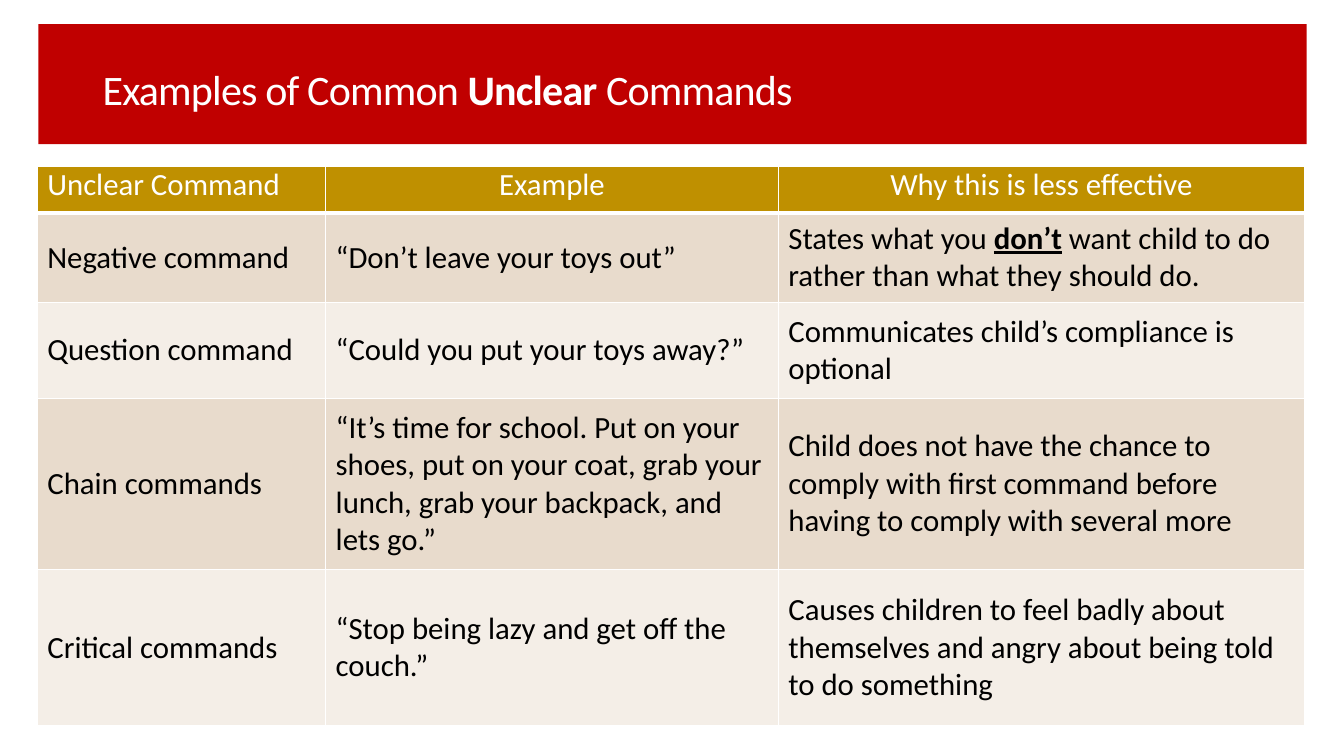
from lxml import etree
from pptx import Presentation
from pptx.dml.color import RGBColor
from pptx.enum.shapes import MSO_SHAPE
from pptx.enum.text import MSO_ANCHOR, PP_ALIGN
from pptx.oxml.ns import qn
from pptx.util import Inches, Pt

RECTANGLE = MSO_SHAPE.RECTANGLE
TOP, MIDDLE = MSO_ANCHOR.TOP, MSO_ANCHOR.MIDDLE
LEFT, CENTER = PP_ALIGN.LEFT, PP_ALIGN.CENTER

THEME = {
    "font": "Calibri",
    "title_size": 30,
    "table_size": 22,
    "banner": "C00000",
    "header": "BF9000",
    "bands": ("E8DBCC", "F4EEE7"),
    "light": "FFFFFF",
    "dark": "000000",
}

COLUMN_WIDTHS = (2.86, 4.49, 5.22)
ROW_HEIGHTS = (0.46, 0.89, 0.95, 1.7, 1.55)

# Each cell is a list of text pieces; every second piece is emphasised
TABLE_ROWS = (
    (["Unclear Command"], ["Example"], ["Why this is less effective"]),
    (["Negative command"], ["“Don’t leave your toys out”"],
     ["States what you ", "don’t", " want child to do rather than what they should do."]),
    (["Question command"], ["“Could you put your toys away?”"],
     ["Communicates child’s compliance is optional"]),
    (["Chain commands"],
     ["“It’s time for school. Put on your shoes, put on your coat, grab your lunch, "
      "grab your backpack, and lets go.”"],
     ["Child does not have the chance to comply with first command before having to "
      "comply with several more"]),
    (["Critical commands"], ["“Stop being lazy and get off the couch.”"],
     ["Causes children to feel badly about themselves and angry about being told to do "
      "something"]),
)


def write_text(text_frame, pieces, size, color, align=LEFT, underline=False,
               line_spacing=None, tracking=None):
    paragraph = text_frame.paragraphs[0]
    paragraph.alignment = align
    if line_spacing:
        paragraph.line_spacing = line_spacing
    for index, piece in enumerate(pieces):
        emphasised = index % 2 == 1
        run = paragraph.add_run()
        run.text = piece
        run.font.name = THEME["font"]
        run.font.size = Pt(size)
        run.font.bold = emphasised
        run.font.underline = emphasised and underline
        run.font.color.rgb = RGBColor.from_string(color)
        if tracking:
            run.font._element.set("spc", str(tracking))


def add_border(cell, side, points):
    line = etree.SubElement(cell._tc.get_or_add_tcPr(), qn(f"a:ln{side}"), w=str(Pt(points)))
    fill = etree.SubElement(line, qn("a:solidFill"))
    etree.SubElement(fill, qn("a:srgbClr"), val=THEME["light"])


presentation = Presentation()
presentation.slide_width = Inches(13.33)
presentation.slide_height = Inches(7.5)
slide = presentation.slides.add_slide(presentation.slide_layouts[6])

# Banner
banner = slide.shapes.add_shape(
    RECTANGLE, Inches(0.38), Inches(0.24), Inches(12.58), Inches(1.19))
banner.shadow.inherit = False
banner.fill.solid()
banner.fill.fore_color.rgb = RGBColor.from_string(THEME["banner"])
banner.line.fill.background()

# Title
title = slide.shapes.add_textbox(Inches(0.92), Inches(0.3), Inches(11.5), Inches(1.22))
title.text_frame.word_wrap = True
title.text_frame.vertical_anchor = MIDDLE
write_text(title.text_frame, ["Examples of Common ", "Unclear", " Commands"],
           THEME["title_size"], THEME["light"], line_spacing=0.9, tracking=-60)

# Table of commands
table = slide.shapes.add_table(
    len(ROW_HEIGHTS), len(COLUMN_WIDTHS), Inches(0.37), Inches(1.65),
    Inches(sum(COLUMN_WIDTHS)), Inches(sum(ROW_HEIGHTS))).table
table.first_row = False
table.horz_banding = False
for column, width in zip(table.columns, COLUMN_WIDTHS):
    column.width = Inches(width)

for row_index, (height, texts) in enumerate(zip(ROW_HEIGHTS, TABLE_ROWS)):
    table.rows[row_index].height = Inches(height)
    is_header = row_index == 0
    fill_color = THEME["header"] if is_header else THEME["bands"][(row_index - 1) % 2]
    for column_index, pieces in enumerate(texts):
        cell = table.cell(row_index, column_index)
        cell.margin_left = cell.margin_right = Inches(0.1)
        cell.margin_top = cell.margin_bottom = 0
        cell.vertical_anchor = TOP if is_header else MIDDLE
        for side in "LRTB":
            add_border(cell, side, 3 if is_header and side == "B" else 1)
        cell.fill.solid()
        cell.fill.fore_color.rgb = RGBColor.from_string(fill_color)
        write_text(cell.text_frame, pieces, THEME["table_size"],
                   THEME["light"] if is_header else THEME["dark"],
                   align=CENTER if is_header and column_index else LEFT, underline=True)

presentation.save("out.pptx")
